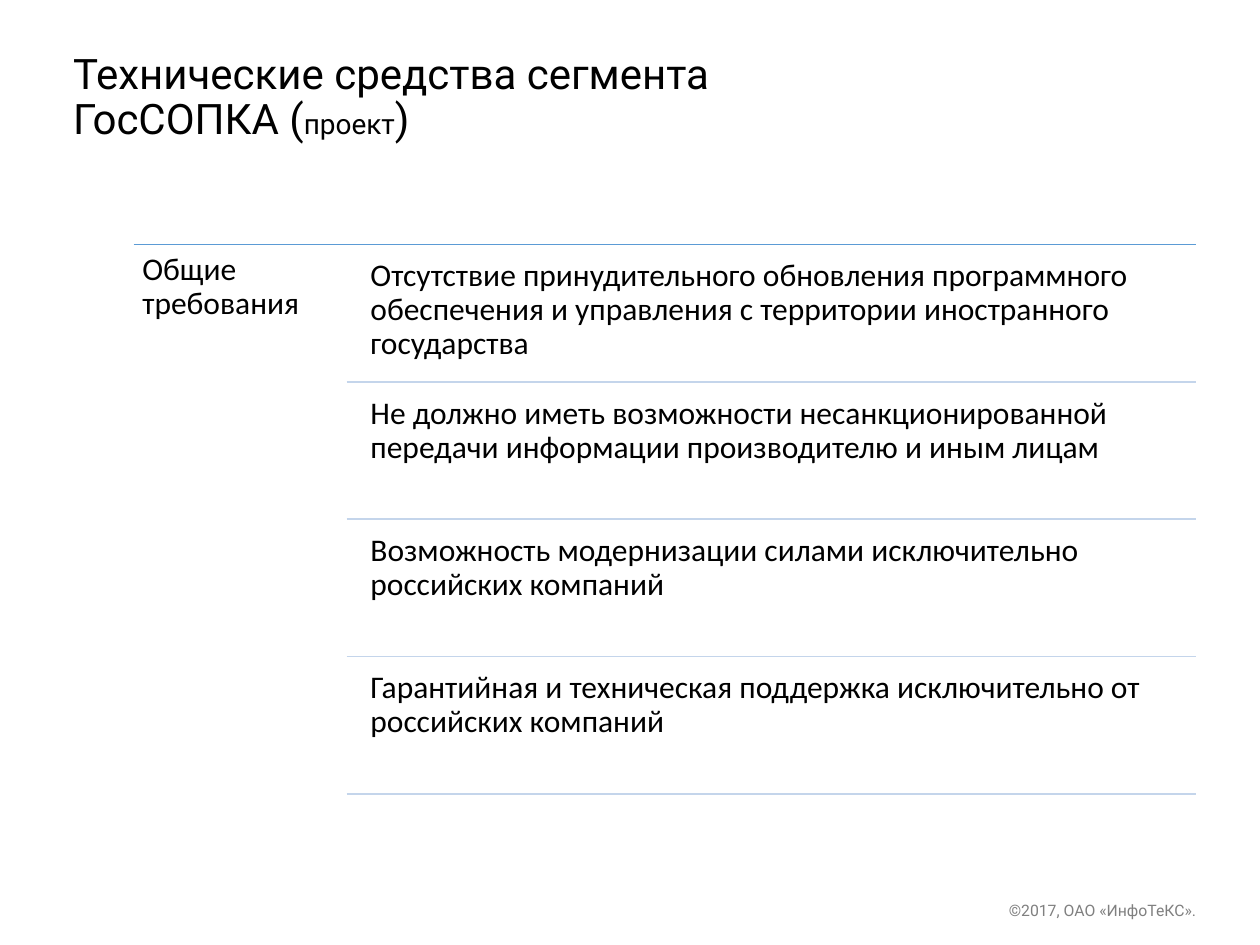
from lxml import etree
from pptx import Presentation
from pptx.dml.color import RGBColor
from pptx.enum.shapes import MSO_CONNECTOR as Connector
from pptx.enum.text import MSO_ANCHOR as Anchor, PP_ALIGN as Align
from pptx.oxml.ns import qn
from pptx.util import Inches, Pt

COLORS = {
    "text": "000000",
    "footer": "808080",
    "accent": "5B9BD5",
    "divider": "C4D5EB",
}

REQUIREMENTS = [
    "Отсутствие принудительного обновления программного обеспечения "
    "и управления с территории иностранного государства",
    "Не должно иметь возможности несанкционированной передачи информации "
    "производителю и иным лицам",
    "Возможность модернизации силами исключительно российских компаний",
    "Гарантийная и техническая поддержка исключительно от российских компаний",
]


class SlideBuilder:
    """Holds the style and the current slide."""

    def __init__(self, slide):
        self.slide = slide

    def text(self, left, top, width, height, runs, color="text", font="Calibri",
             inset=0.07, anchor=Anchor.TOP, align=Align.LEFT, spacing=0.9):
        """Add a text box; runs is a list of (text, size in points)."""
        box = self.slide.shapes.add_textbox(
            Inches(left), Inches(top), Inches(width), Inches(height))
        frame = box.text_frame
        frame.word_wrap = True
        frame.vertical_anchor = anchor
        frame.margin_left = frame.margin_right = Inches(inset)
        frame.margin_top = frame.margin_bottom = Inches(min(inset, 0.07))
        para = frame.paragraphs[0]
        para.alignment = align
        para.line_spacing = spacing
        for words, size in runs:
            span = para.add_run()
            span.text = words
            span.font.name = font
            span.font.size = Pt(size)
            span.font.color.rgb = RGBColor.from_string(COLORS[color])

    def rule(self, left, right, y, color):
        """Add a horizontal line."""
        line = self.slide.shapes.add_connector(
            Connector.STRAIGHT, Inches(left), Inches(y), Inches(right), Inches(y))
        line.line.color.rgb = RGBColor.from_string(COLORS[color])
        line.line.width = Pt(1)
        etree.SubElement(line._element.spPr, qn("a:effectLst"))


def main():
    deck = Presentation()
    deck.slide_width, deck.slide_height = Inches(10), Inches(7.5)
    page = SlideBuilder(deck.slides.add_slide(deck.slide_layouts[6]))

    # Title
    page.text(0.58, 0.42, 5.08, 0.72,
              [("Технические средства сегмента ГосСОПКА (", 24),
               ("проект", 16), (")", 24)],
              font="Roboto", inset=0, anchor=Anchor.MIDDLE)

    # Section heading under the top rule
    left, right, top = 1.06, 9.49, 1.94
    page.rule(left, right, top, "accent")
    page.text(left, top, 1.69, 4.41, [("Общие требования", 18)])

    # Requirements, each closed by a divider
    row_height, gap = 1.04, 0.05
    pitch = row_height + gap
    for index, requirement in enumerate(REQUIREMENTS):
        row_top = top + gap + index * pitch
        page.text(2.87, row_top, 6.61, row_height, [(requirement, 18)])
        page.rule(2.75, right, row_top + row_height, "divider")

    # Footer
    page.text(7.42, 7.08, 2.17, 0.22, [("©2017, ОАО «ИнфоТеКС».", 9)],
              color="footer", font="Roboto", inset=0.1, align=Align.RIGHT,
              spacing=1.0)

    deck.save("out.pptx")


if __name__ == "__main__":
    main()
